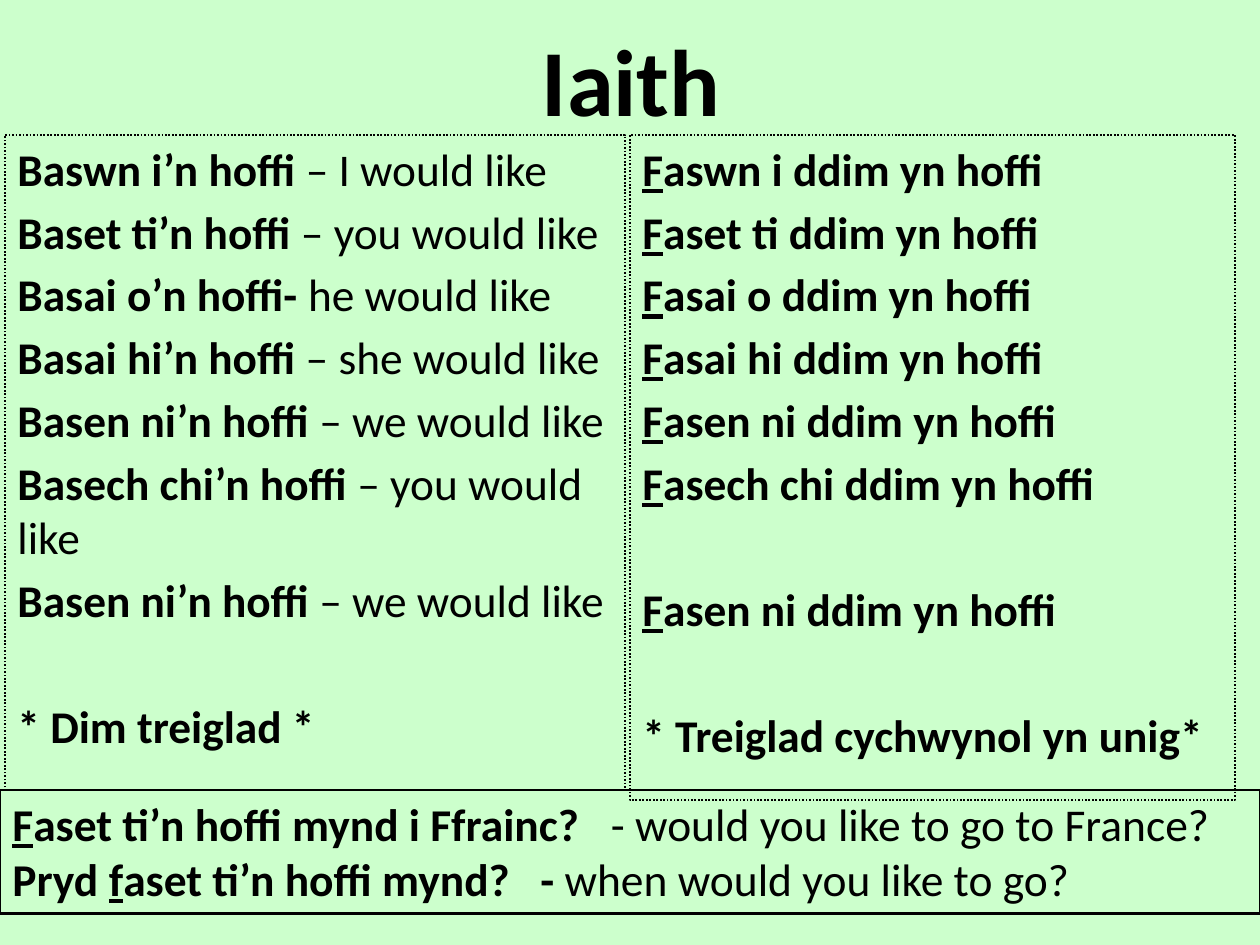
import pptx
import pptx.dml.color
import pptx.enum.dml
import pptx.enum.shapes
import pptx.enum.text
import pptx.oxml.ns
import pptx.util
from dataclasses import dataclass
from lxml import etree

# Grid of 100 columns by 75 rows, 0.1 inch each
CELL = 0.1
COLUMNS, ROWS = 100, 75


@dataclass(frozen=True)
class Theme:
    background: str = "CCFFCC"
    ink: str = "000000"
    font: str = "Calibri"
    title_size: float = 54
    verb_size: float = 25.9
    example_size: float = 26
    verb_gap: float = 4.75
    blank_line: float = 36.35


THEME = Theme()

# Welsh form and its English meaning
POSITIVE = [
    ("Baswn i’n hoffi ", "– I would like"),
    ("Baset ti’n hoffi ", "– you would like"),
    ("Basai o’n hoffi- ", "he would like"),
    ("Basai hi’n hoffi ", "– she would like"),
    ("Basen ni’n hoffi ", "– we would like"),
    ("Basech chi’n hoffi ", "– you would like"),
    ("Basen ni’n hoffi ", "– we would like"),
]
# Endings that follow the mutated first letter F
NEGATIVE = ["aswn i", "aset ti", "asai o", "asai hi", "asen ni", "asech chi", "asen ni"]


def grid(n):
    return pptx.util.Inches(n * CELL)


def rgb(value):
    return pptx.dml.color.RGBColor.from_string(value)


def add_paragraph(tf, runs, size, before=0, tab=None):
    """Add bold text; each run is (text, style), style "u" underlined or "plain"."""
    p = tf.paragraphs[0]
    if p.runs:
        p = tf.add_paragraph()
    p.space_before = pptx.util.Pt(before)
    p.font.name = THEME.font
    p.font.size = pptx.util.Pt(size)
    p.font.color.rgb = rgb(THEME.ink)
    p.font.bold = True
    for text, style in runs:
        r = p.add_run()
        r.text = text
        if style == "u":
            r.font.underline = True
        elif style == "plain":
            r.font.bold = False
    if tab:
        tabs = etree.Element(pptx.oxml.ns.qn("a:tabLst"))
        etree.SubElement(tabs, pptx.oxml.ns.qn("a:tab"), pos=str(grid(tab)), algn="l")
        p.font  # the character defaults come after the tab list
        defaults = p._p.pPr.find(pptx.oxml.ns.qn("a:defRPr"))
        defaults.addprevious(tabs)
    return p


def add_title(s, text):
    sp = s.shapes.add_textbox(grid(5.1), 0, grid(90), grid(12.5))
    tf = sp.text_frame
    tf.word_wrap = True
    tf.vertical_anchor = pptx.enum.text.MSO_ANCHOR.MIDDLE
    p = add_paragraph(tf, [(text, None)], THEME.title_size)
    p.alignment = pptx.enum.text.PP_ALIGN.CENTER


def add_box(s, left, top, width, height, weight, dash=None):
    """Add an outlined, unfilled rectangle and return its text frame."""
    sp = s.shapes.add_shape(pptx.enum.shapes.MSO_SHAPE.RECTANGLE,
                            grid(left), grid(top), grid(width), grid(height))
    sp.shadow.inherit = False
    sp.fill.background()
    sp.line.color.rgb = rgb(THEME.ink)
    sp.line.width = pptx.util.Pt(weight)
    if dash:
        sp.line.dash_style = dash
    tf = sp.text_frame
    tf.word_wrap = True
    tf.vertical_anchor = pptx.enum.text.MSO_ANCHOR.TOP
    return tf


def add_verbs(s, left, width, height, lines, after_blank):
    """Add a dotted column; lines listed in after_blank leave a line free above."""
    tf = add_box(s, left, 10.7, width, height, 1, pptx.enum.dml.MSO_LINE.ROUND_DOT)
    for i, runs in enumerate(lines):
        before = THEME.verb_gap + (THEME.blank_line if i in after_blank else 0)
        p = add_paragraph(tf, runs, THEME.verb_size, before)
        p.alignment = pptx.enum.text.PP_ALIGN.LEFT


def add_examples(s):
    tf = add_box(s, 0, 62.7, COLUMNS, 9.8, 1.5)
    examples = [
        ([("F", "u"), ("aset ti’n hoffi mynd i Ffrainc?\t", None),
          ("- would you like to go to France?", "plain")], 47.5),
        ([("Pryd ", None), ("f", "u"), ("aset ti’n hoffi mynd?\t- ", None),
          ("when would you like to go?", "plain")], 41.9),
    ]
    for runs, tab in examples:
        p = add_paragraph(tf, runs, THEME.example_size, tab=tab)
        p.alignment = pptx.enum.text.PP_ALIGN.LEFT


def main():
    prs = pptx.Presentation()
    prs.slide_width, prs.slide_height = grid(COLUMNS), grid(ROWS)
    s = prs.slides.add_slide(prs.slide_layouts[6])
    s.background.fill.solid()
    s.background.fill.fore_color.rgb = rgb(THEME.background)

    add_title(s, "Iaith")

    # Positive forms on the left, negative forms on the right
    positive = [[(welsh, None), (english, "plain")] for welsh, english in POSITIVE]
    positive.append([("* Dim treiglad *", None)])
    add_verbs(s, 0.4, 49.2, 52, positive, {7})

    negative = [[("F", "u"), (f"{ending} ddim yn hoffi", None)] for ending in NEGATIVE]
    negative.append([("* Treiglad cychwynol yn unig*", None)])
    add_verbs(s, 50, 48, 52.8, negative, {6, 7})

    # Example questions along the bottom
    add_examples(s)
    prs.save("out.pptx")


if __name__ == "__main__":
    main()
